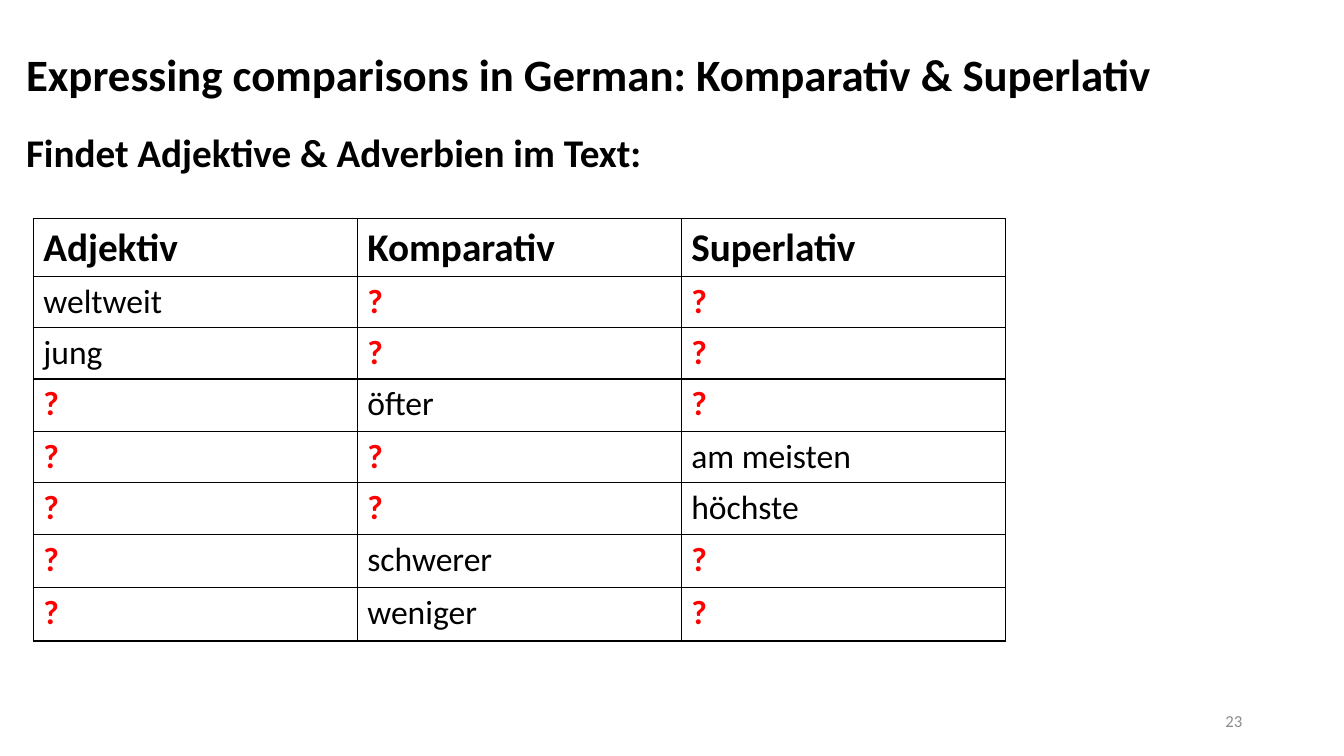
from pptx import Presentation
from pptx.dml.color import RGBColor
from pptx.enum.text import MSO_ANCHOR as Anchor, PP_ALIGN as Align
from pptx.oxml.ns import qn
from pptx.util import Inches, Pt
from lxml.etree import SubElement

FONT = "Calibri"
BLACK = RGBColor(0x00, 0x00, 0x00)
RED = RGBColor(0xFF, 0x00, 0x00)
GRAY = RGBColor(0x8C, 0x8C, 0x8C)

GAP = "?"
HEADINGS = ("Adjektiv", "Komparativ", "Superlativ")
WORDS = (
    ("weltweit", GAP, GAP),
    ("jung", GAP, GAP),
    (GAP, "öfter", GAP),
    (GAP, GAP, "am meisten"),
    (GAP, GAP, "höchste"),
    (GAP, "schwerer", GAP),
    (GAP, "weniger", GAP),
)
ROW_HEIGHTS = (0.57, 0.51, 0.51, 0.52, 0.51, 0.51, 0.53, 0.53)


def set_text(para, text, size, color=BLACK, bold=False):
    para.text = text
    font = para.font
    font.name, font.size, font.bold = FONT, Pt(size), bold
    font.color.rgb = color


def add_text(page, box, text, size, color=BLACK, bold=False, anchor=Anchor.MIDDLE):
    """Add a one-paragraph text box and return its paragraph."""
    frame = page.shapes.add_textbox(*map(Inches, box)).text_frame
    frame.word_wrap = True
    frame.vertical_anchor = anchor
    para = frame.paragraphs[0]
    set_text(para, text, size, color, bold)
    return para


def add_title(page, box):
    para = add_text(page, box, "Expressing comparisons in German: Komparativ & Superlativ",
                    32, bold=True)
    para.line_spacing = 0.9


def add_task(page, box):
    para = add_text(page, box, "Findet Adjektive & Adverbien im Text:", 28,
                    bold=True, anchor=Anchor.TOP)
    para.line_spacing = 0.9
    para.space_before = Pt(10)


def add_borders(cell):
    properties = cell._tc.get_or_add_tcPr()
    for position, side in enumerate(("a:lnL", "a:lnR", "a:lnT", "a:lnB")):
        line = properties.makeelement(qn(side), {"w": str(Pt(1))})
        fill = SubElement(line, qn("a:solidFill"))
        SubElement(fill, qn("a:srgbClr"), val=str(BLACK))
        properties.insert(position, line)


def add_word_table(page, box):
    rows = (HEADINGS, *WORDS)
    table = page.shapes.add_table(len(rows), len(HEADINGS), *map(Inches, box)).table
    table.first_row = table.horz_banding = False
    for row, height in zip(table.rows, ROW_HEIGHTS):
        row.height = Inches(height)
    for row_index, row in enumerate(rows):
        for column_index, word in enumerate(row):
            cell = table.cell(row_index, column_index)
            cell.fill.background()
            add_borders(cell)
            is_gap, is_heading = word == GAP, row is HEADINGS
            set_text(cell.text_frame.paragraphs[0], word, 28 if is_heading else 24,
                     RED if is_gap else BLACK, is_gap or is_heading)


def add_page_number(page, box):
    add_text(page, box, "23", 12, GRAY).alignment = Align.RIGHT


def main():
    deck = Presentation()
    deck.slide_width, deck.slide_height = Inches(13.33), Inches(7.5)
    page = deck.slides.add_slide(deck.slide_layouts[6])
    add_title(page, (0.16, 0.24, 11.49, 1.04))
    add_task(page, (0.16, 1.28, 12.93, 6.04))
    add_word_table(page, (0.33, 2.17, 9.64, sum(ROW_HEIGHTS)))
    add_page_number(page, (9.42, 6.95, 3, 0.4))
    deck.save("out.pptx")


if __name__ == "__main__":
    main()
